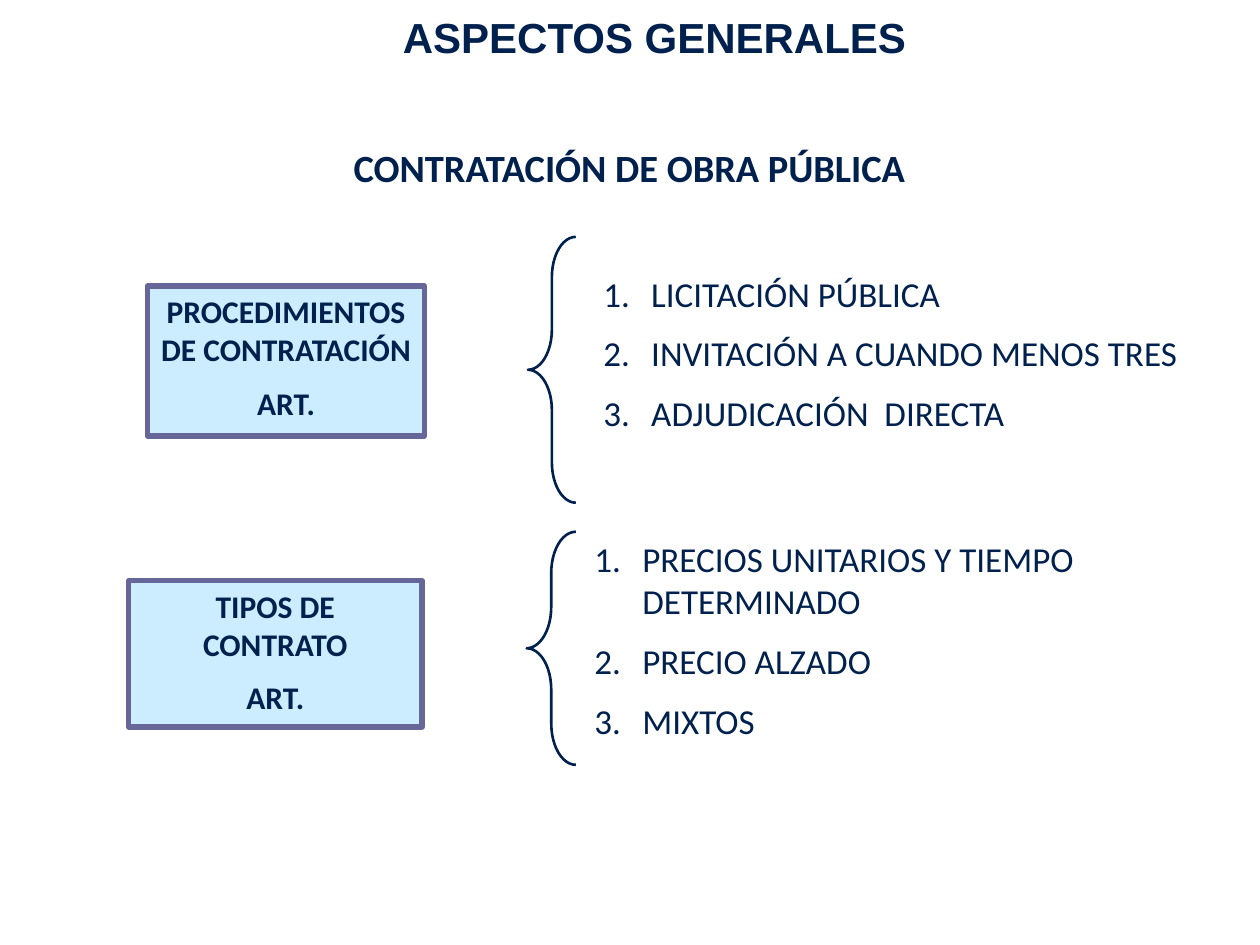
from pptx import Presentation
from pptx import util as u
from pptx.dml.color import RGBColor
from pptx.enum import shapes, text
from pptx.oxml.ns import qn
from lxml import etree

COLORS = {"navy": "00204E", "sky": "CCECFF", "edge": "666699"}


def color(name):
    """Return a palette colour."""
    return RGBColor.from_string(COLORS[name])


def place(*lengths):
    """Turn inches into lengths."""
    return [u.Inches(n) for n in lengths]


def number(para):
    """Give a paragraph a hanging automatic number."""
    props = para._p.get_or_add_pPr()
    props.set("marL", str(u.Inches(0.38)))
    props.set("indent", str(u.Inches(-0.38)))
    etree.SubElement(props, qn("a:buFont"), typeface="+mj-lt")
    etree.SubElement(props, qn("a:buAutoNum"), type="arabicPeriod")


def write(frame, lines, size, bold=True, numbered=False, face="Calibri"):
    """Fill a text frame, one paragraph per line."""
    frame.word_wrap = True
    for i, line in enumerate(lines):
        para = frame.add_paragraph() if i else frame.paragraphs[0]
        if numbered:
            number(para)
        para.alignment = text.PP_ALIGN.LEFT if numbered else text.PP_ALIGN.CENTER
        para.space_before = u.Pt(size / 2 if i else 0)
        run = para.add_run()
        run.text = line
        run.font.name, run.font.size, run.font.bold = face, u.Pt(size), bold
        run.font.color.rgb = color("navy")


def add_title(slide, line):
    """Set the slide title."""
    title = slide.shapes.title
    title.left, title.top, title.width, title.height = place(0.39, 0, 9.61, 0.55)
    write(title.text_frame, [line], 24, face="Arial")
    title.text_frame.vertical_anchor = text.MSO_ANCHOR.MIDDLE
    title.text_frame.paragraphs[0].line_spacing = 1.1


def add_text(slide, box, lines, size, **style):
    """Add a text box that grows with its text."""
    frame = slide.shapes.add_textbox(*place(*box)).text_frame
    write(frame, lines, size, **style)
    frame.auto_size = text.MSO_AUTO_SIZE.SHAPE_TO_FIT_TEXT


def add_shape(slide, kind, box, line, width):
    """Add an outlined shape without shadow."""
    shape = slide.shapes.add_shape(kind, *place(*box))
    shape.shadow.inherit = False
    shape.line.color.rgb = color(line)
    shape.line.width = u.Pt(width)
    return shape


def add_topic(slide, box, lines):
    """Add a framed topic label."""
    topic = add_shape(slide, shapes.MSO_SHAPE.RECTANGLE, box, "edge", 3)
    topic.fill.solid()
    topic.fill.fore_color.rgb = color("sky")
    topic.text_frame.vertical_anchor = text.MSO_ANCHOR.TOP
    write(topic.text_frame, lines, 18)


def add_brace(slide, box):
    """Add a left brace."""
    brace = add_shape(slide, shapes.MSO_SHAPE.LEFT_BRACE, box, "navy", 1.5)
    brace.fill.background()
    brace.adjustments[0] = 0.84


def main():
    """Build the slide."""
    deck = Presentation()
    deck.slide_width, deck.slide_height = place(10, 7.5)
    slide = deck.slides.add_slide(deck.slide_layouts[5])
    add_title(slide, "ASPECTOS GENERALES")
    add_text(slide, (2.27, 1.09, 5.45, 0.47), ["CONTRATACIÓN DE OBRA PÚBLICA"], 22)
    groups = [
        ((1.17, 2.27, 2.2, 1.19), ["PROCEDIMIENTOS DE CONTRATACIÓN", "ART."],
         (4.19, 1.88, 0.38, 2.11), (4.69, 2.11, 4.88, 1.45),
         ["LICITACIÓN PÚBLICA", "INVITACIÓN A CUANDO MENOS TRES",
          "ADJUDICACIÓN  DIRECTA"]),
        ((1.02, 4.61, 2.33, 1.16), ["TIPOS DE CONTRATO", "ART."],
         (4.18, 4.22, 0.39, 1.85), (4.62, 4.22, 4.94, 1.78),
         ["PRECIOS UNITARIOS Y TIEMPO DETERMINADO", "PRECIO ALZADO", "MIXTOS"]),
    ]
    for frame, topic, brace, box, items in groups:
        add_topic(slide, frame, topic)
        add_brace(slide, brace)
        add_text(slide, box, items, 20, bold=False, numbered=True)
    deck.save("out.pptx")


if __name__ == "__main__":
    main()
